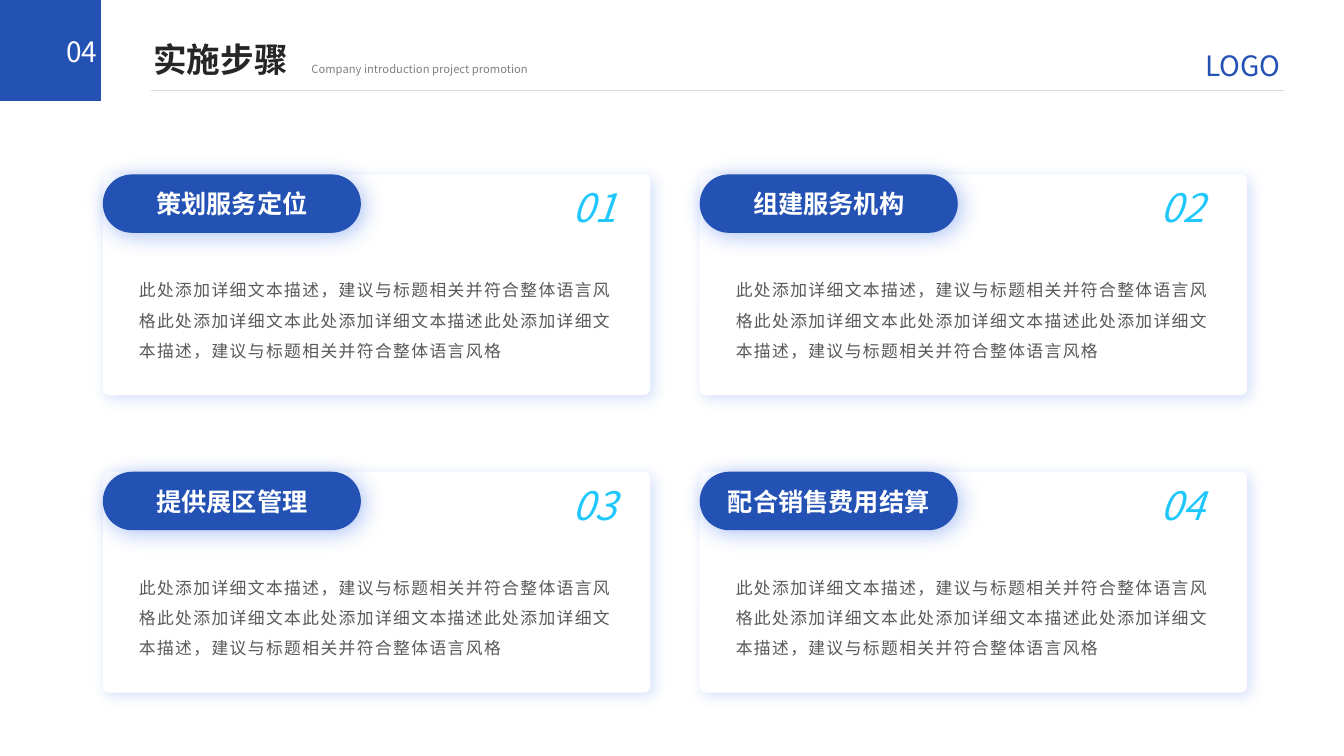
import math
import pptx
import pptx.dml.color
import pptx.enum.shapes
import pptx.enum.text
import pptx.oxml
import pptx.oxml.ns
import pptx.util

Inches = pptx.util.Inches
ALIGN = pptx.enum.text.PP_ALIGN
ANCHOR = pptx.enum.text.MSO_ANCHOR
SHAPE = pptx.enum.shapes.MSO_SHAPE
FONT = "Noto Sans CJK SC"
BLUE, CYAN, WHITE, GLOW = "2351B4", "20C7FD", "FFFFFF", "346BE8"


def write(shape, text, size, color, align=ALIGN.LEFT, anchor=ANCHOR.TOP, wrap=False):
    """Set one paragraph of text and return its only run."""
    frame = shape.text_frame
    frame.text = text
    frame.word_wrap = wrap
    frame.vertical_anchor = anchor
    para = frame.paragraphs[0]
    para.alignment = align
    span = para.runs[0]
    span.font.size = pptx.util.Pt(size)
    span.font.name = FONT
    span.font.bold = False
    span.font.color.rgb = pptx.dml.color.RGBColor.from_string(color)
    east_asian = pptx.oxml.parse_xml(
        f'<a:ea {pptx.oxml.ns.nsdecls("a")} typeface="{FONT}"/>')
    span.font.fill  # the fill stays ahead of the fonts
    span.font._element.find(pptx.oxml.ns.qn("a:latin")).addnext(east_asian)
    return span


def paint(shape, color, shadow=None):
    """Fill without outline; shadow is (colour, opacity %, blur pt)."""
    shape.fill.solid()
    shape.fill.fore_color.rgb = pptx.dml.color.RGBColor.from_string(color)
    shape.line.fill.background()
    shape.shadow.inherit = False
    if shadow:
        tint, opacity, blur = shadow
        effects = shape._element.spPr.find(pptx.oxml.ns.qn("a:effectLst"))
        effects.append(pptx.oxml.parse_xml(
            f'<a:outerShdw {pptx.oxml.ns.nsdecls("a")} blurRad="{blur * 12700}" '
            f'dist="38100" dir="2700000" algn="tl" rotWithShape="0">'
            f'<a:srgbClr val="{tint}"><a:alpha val="{opacity * 1000}"/></a:srgbClr>'
            f'</a:outerShdw>'))


deck = pptx.Presentation()
deck.slide_width, deck.slide_height = Inches(13.33), Inches(7.5)
page = deck.slides.add_slide(deck.slide_layouts[5])
shapes = page.shapes

# Hexagons with rounded corners: centre, radius, colour, shadow
dark = ("000000", 25, 8)
for center_x, center_y, radius, color, shadow in [
        (0.79, 0.56, 0.35, BLUE, None),
        (1.15, 0.93, 0.06, CYAN, dark),
        (0.42, 0.9, 0.1, BLUE, dark)]:
    corners = [(center_x + radius * math.cos(math.radians(angle)),
                center_y + radius * math.sin(math.radians(angle)))
               for angle in range(30, 390, 60)]
    outline = []
    for index, (x, y) in enumerate(corners):
        before, after = corners[index - 1], corners[(index + 1) % 6]
        for step in range(5):
            t = step / 4
            pull_in, pull_out = 0.1 * (1 - t) ** 2, 0.1 * t ** 2
            outline.append((x + pull_in * (before[0] - x) + pull_out * (after[0] - x),
                            y + pull_in * (before[1] - y) + pull_out * (after[1] - y)))
    builder = shapes.build_freeform(*outline[0], scale=Inches(1))
    builder.add_line_segments(outline[1:], close=True)
    paint(builder.convert_to_shape(), color, shadow)

# Header: section number, title, subtitle, corner word and rule
box = shapes.add_textbox(Inches(0.54), Inches(0.29), Inches(0.54), Inches(0.43))
write(box, "04", 20, WHITE, ALIGN.CENTER)

title = shapes.title
title.left, title.top = Inches(1.42), Inches(0.34)
title.width, title.height = Inches(1.55), Inches(0.5)
write(title, "实施步骤", 24, "262626").font.bold = True

box = shapes.add_textbox(Inches(2.99), Inches(0.57), Inches(3.23), Inches(0.24))
write(box, "Company introduction project promotion", 8, "808080", wrap=True)

box = shapes.add_textbox(Inches(11.83), Inches(0.43), Inches(1), Inches(0.44))
write(box, "LOGO", 20, BLUE, ALIGN.CENTER)

rule = shapes.add_connector(pptx.enum.shapes.MSO_CONNECTOR.STRAIGHT,
                            Inches(1.5), Inches(0.9), Inches(12.73), Inches(0.9))
rule.line.color.rgb = pptx.dml.color.RGBColor.from_string("D9D9D9")
rule.line.width = pptx.util.Pt(0.5)
rule._element.spPr.append(
    pptx.oxml.parse_xml(f'<a:effectLst {pptx.oxml.ns.nsdecls("a")}/>'))

# Four step cards in a two by two grid
steps = ["策划服务定位", "组建服务机构", "提供展区管理", "配合销售费用结算"]
detail = ("此处添加详细文本描述，建议与标题相关并符合整体语言风格"
          "此处添加详细文本此处添加详细文本描述"
          "此处添加详细文本描述，建议与标题相关并符合整体语言风格")
for index, step_name in enumerate(steps):
    row, column = divmod(index, 2)
    left, top = 1.02 + 5.92 * column, 1.73 + 2.95 * row

    card = shapes.add_shape(SHAPE.ROUNDED_RECTANGLE, Inches(left), Inches(top),
                            Inches(5.43), Inches(2.19))
    card.adjustments[0] = 0.03
    paint(card, WHITE, (GLOW, 20, 10))

    pill = shapes.add_shape(SHAPE.ROUNDED_RECTANGLE, Inches(left), Inches(top),
                            Inches(2.56), Inches(0.58))
    pill.adjustments[0] = 0.5
    paint(pill, BLUE, (GLOW, 40, 16))
    write(pill, step_name, 18, WHITE, ALIGN.CENTER, ANCHOR.MIDDLE, True).font.bold = True

    box = shapes.add_textbox(Inches(left + 0.26), Inches(top + 0.9),
                             Inches(5.06), Inches(1.01))
    span = write(box, detail, 12, "595959", wrap=True)
    span.font._element.set("spc", "100")
    box.text_frame.paragraphs[0].line_spacing = 1.5

    box = shapes.add_textbox(Inches(5.58 + 5.83 * column), Inches(1.77 + 2.96 * row),
                             Inches(0.66), Inches(0.57))
    write(box, f"{index + 1:02d}", 28, CYAN).font.italic = True

deck.save("out.pptx")
